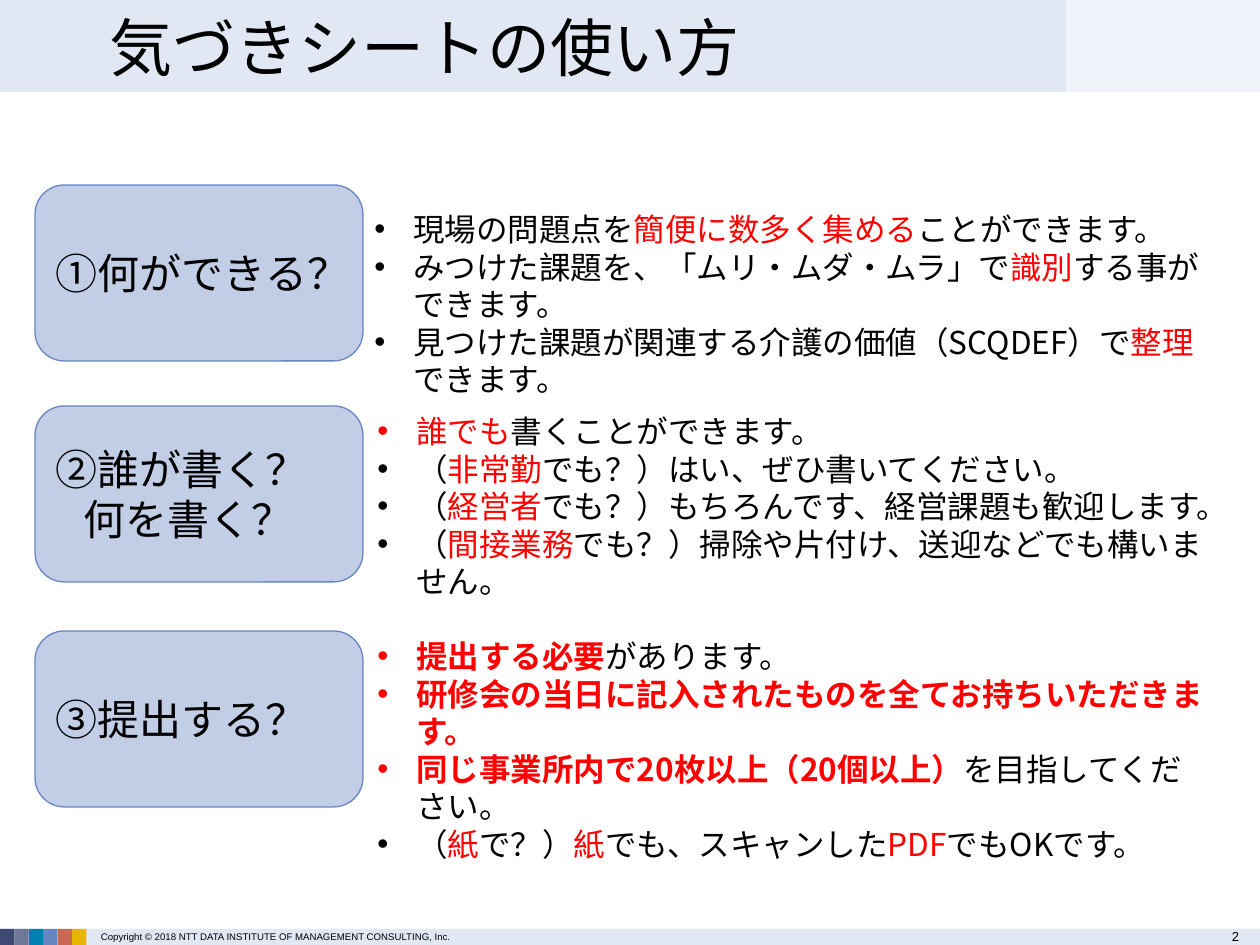
from lxml import etree
from pptx import Presentation
from pptx import util as u
from pptx.dml.color import RGBColor
from pptx.enum import shapes, text
from pptx.oxml import ns

PX = 914400 / 126
JP = "Noto Sans CJK JP"
PALE, BLACK, RED = "E1E7F3", "000000", "FF0000"
BOX = shapes.MSO_SHAPE.RECTANGLE
ROUND = shapes.MSO_SHAPE.ROUNDED_RECTANGLE

# Heading, top of its box, top of its list, number of items with bold red, items.
# In an item, the parts between asterisks are red.
TOPICS = [
    (["①何ができる？"], 185, 204, 0, [
        "現場の問題点を*簡便に数多く集める*ことができます。",
        "みつけた課題を、「ムリ・ムダ・ムラ」で*識別*する事ができます。",
        "見つけた課題が関連する介護の価値（SCQDEF）で*整理*できます。"]),
    (["②誰が書く？", "何を書く？"], 406, 406, 0, [
        "*誰でも*書くことができます。",
        "（*非常勤*でも？）はい、ぜひ書いてください。",
        "（*経営者*でも？）もちろんです、経営課題も歓迎します。",
        "（*間接業務*でも？）掃除や片付け、送迎などでも構いません。"]),
    (["③提出する？"], 631, 631, 3, [
        "*提出する必要*があります。",
        "*研修会の当日に記入されたものを全てお持ちいただきます。*",
        "*同じ事業所内で20枚以上（20個以上）*を目指してください。",
        "（*紙*で？）*紙*でも、スキャンした*PDF*でもOKです。"]),
]


def px(n):
    return u.Emu(round(n * PX))


def rgb(code):
    return RGBColor.from_string(code)


def sub(node, tag, **attrs):
    return etree.SubElement(node, ns.qn(tag), attrs)


def put(para, words, size=18, color=BLACK, bold=False, face=JP):
    run = para.add_run()
    run.text = words
    font = run.font
    font.size, font.bold, font.name = u.Pt(size), bold, face
    font.color.rgb = rgb(color)
    sub(run._r.get_or_add_rPr(), "a:ea", typeface=face)


def block(slide, kind, at, fill, line=None, alpha=None):
    shape = slide.shapes.add_shape(kind, *map(px, at))
    shape.shadow.inherit = False
    shape.fill.solid()
    shape.fill.fore_color.rgb = rgb(fill)
    if alpha:
        tone = shape.fill._xPr.find(".//" + ns.qn("a:srgbClr"))
        sub(tone, "a:alpha", val=str(alpha * 1000))
    if line:
        shape.line.color.rgb = rgb(line)
        shape.line.width = u.Pt(0.75)
    else:
        shape.line.fill.background()
    return shape


def frame(slide, at, wrap=True):
    area = slide.shapes.add_textbox(*map(px, at)).text_frame
    area.word_wrap = wrap
    return area


def paras(area, items):
    for i, item in enumerate(items):
        yield (area.add_paragraph() if i else area.paragraphs[0]), item


def bullet(para, color):
    props = para._p.get_or_add_pPr()
    props.set("marL", str(px(39)))
    props.set("indent", str(px(-39)))
    sub(sub(props, "a:buClr"), "a:srgbClr", val=color)
    sub(props, "a:buFont", typeface="Arial")
    sub(props, "a:buChar", char="•")


def listing(slide, at, items, strong):
    for i, (para, item) in enumerate(paras(frame(slide, at), items)):
        bullet(para, RED if item.startswith("*") else BLACK)
        para.line_spacing = u.Pt(21.5)
        for j, part in enumerate(item.split("*")):
            red = j % 2 == 1
            if part:
                put(para, part, color=RED if red else BLACK,
                    bold=red and i < strong)


def heading(slide, at, lines):
    area = block(slide, ROUND, at, "C2CEE6", "6785C1").text_frame
    area.word_wrap = True
    area.vertical_anchor = text.MSO_ANCHOR.MIDDLE
    for i, (para, line) in enumerate(paras(area, lines)):
        para.alignment = text.PP_ALIGN.LEFT
        para.line_spacing = u.Pt(28.8)
        if i:
            para._p.get_or_add_pPr().set("marL", str(px(28)))
        put(para, line, size=24)


def title(slide, words):
    shape = slide.shapes.title
    slide.shapes._spTree.append(shape._element)  # in front of the bar
    shape.left, shape.top, shape.width, shape.height = map(px, (86, 0, 970, 92))
    area = shape.text_frame
    area.auto_size = text.MSO_AUTO_SIZE.NONE
    area.vertical_anchor = text.MSO_ANCHOR.MIDDLE
    area.margin_left = area.margin_right = px(23)
    area.margin_top = area.margin_bottom = px(6)
    area.paragraphs[0].alignment = text.PP_ALIGN.LEFT
    put(area.paragraphs[0], words, size=36)


def small(slide, at, words, size):
    area = frame(slide, at, wrap=False)
    area.margin_left = area.margin_right = px(10)
    area.margin_top = area.margin_bottom = 0
    put(area.paragraphs[0], words, size=size, face="Arial")


def footer(slide):
    block(slide, BOX, (0, 929, 1260, 16), PALE)
    tones = ["3F4973", "6F7796", "0080B1", "6785C1", "C96953", "E6B600"]
    for i, tone in enumerate(tones):
        block(slide, BOX, (i * 14.4, 929, 14.4, 16), tone)
    small(slide, (1222, 929, 38, 32), "2", 7.4)
    small(slide, (91, 931, 430, 11),
          "Copyright © 2018 NTT DATA INSTITUTE OF MANAGEMENT CONSULTING, Inc.", 5.5)


def main():
    deck = Presentation()
    deck.slide_width, deck.slide_height = u.Inches(10), u.Inches(7.5)
    slide = deck.slides.add_slide(deck.slide_layouts[5])

    # Header bar and footer
    block(slide, BOX, (0, 0, 1066, 92), PALE)
    block(slide, BOX, (1066, 0, 194, 92), PALE, alpha=50)
    footer(slide)
    title(slide, "気づきシートの使い方")

    # Questions on the left, answers on the right
    for i, (lines, top, start, strong, items) in enumerate(TOPICS):
        heading(slide, (35, top, 328, 176), lines)
        listing(slide, (365 if i else 362, start, 858, 165), items, strong)

    deck.save("out.pptx")


if __name__ == "__main__":
    main()
